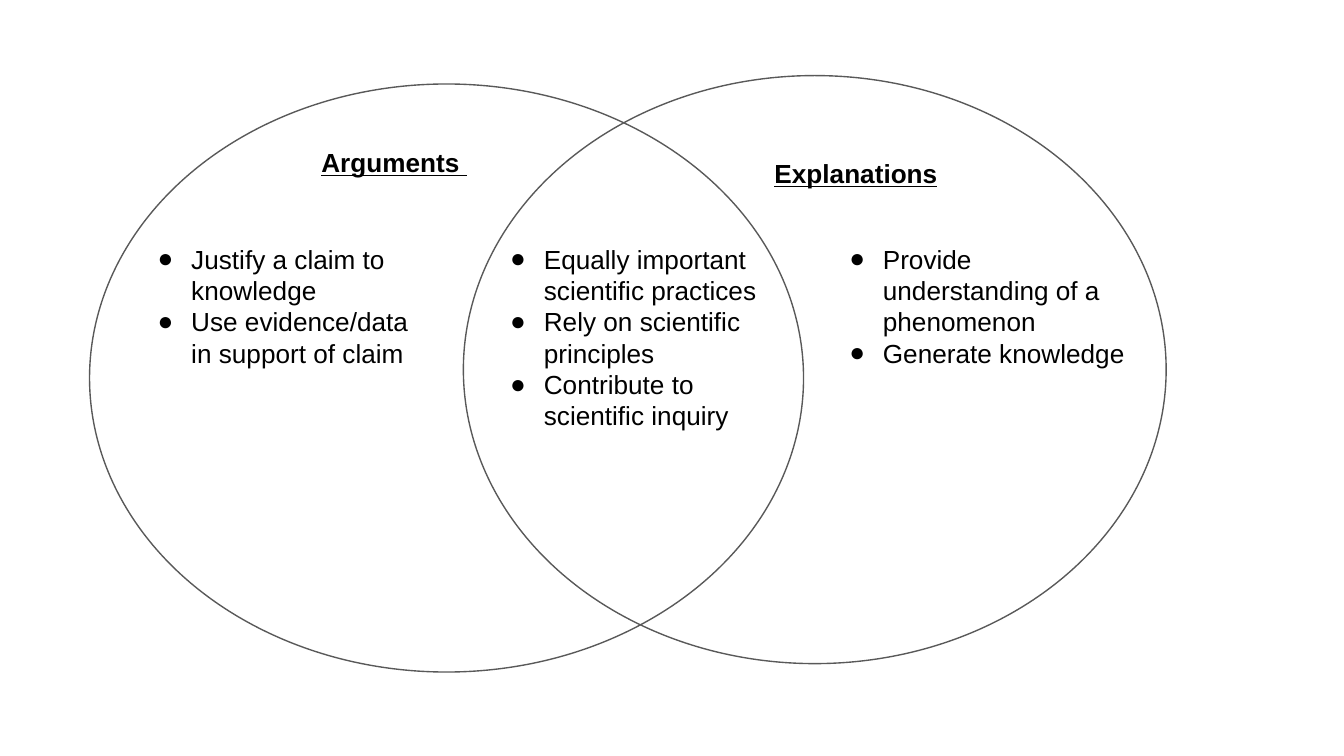
"""Build a Venn diagram slide comparing arguments and explanations."""
from lxml.etree import SubElement
from pptx import Presentation
from pptx.dml.color import RGBColor
from pptx.enum.shapes import MSO_SHAPE
from pptx.enum.text import MSO_ANCHOR, MSO_AUTO_SIZE, PP_ALIGN
from pptx.oxml.ns import qn
from pptx.util import Emu, Pt

COLORS = {"text": "000000", "outline": "595959"}
PX = 9525


class Venn:
    def __init__(self, prs):
        self.font, self.size = "Arial", Pt(14)
        self.s = prs.slides.add_slide(prs.slide_layouts[4])
        self.s.shapes.title.element.getparent().remove(self.s.shapes.title.element)

    def color(self, name):
        return RGBColor.from_string(COLORS[name])

    def circle(self, *box):
        sp = self.s.shapes.add_shape(MSO_SHAPE.OVAL, *(Emu(v * PX) for v in box))
        sp.shadow.inherit = False
        sp.fill.background()
        sp.line.color.rgb = self.color("outline")
        sp.line.width = Pt(0.75)

    def text(self, lines, box, idx=None, heading=False):
        box = [Emu(v * PX) for v in box]
        if idx is None:
            sp = self.s.shapes.add_textbox(*box)
        else:
            sp = self.s.placeholders[idx]
            sp.left, sp.top, sp.width, sp.height = box
        tf = sp.text_frame
        tf.text = "\n".join(lines)
        tf.word_wrap = True
        tf.auto_size = MSO_AUTO_SIZE.NONE
        tf.vertical_anchor = MSO_ANCHOR.TOP
        tf.margin_left = tf.margin_right = tf.margin_top = tf.margin_bottom = Pt(7.2)
        for p in tf.paragraphs:
            p.alignment = PP_ALIGN.CENTER if heading else PP_ALIGN.LEFT
            p.space_before = p.space_after = Pt(0)
            p.line_spacing = 1.0
            for r in p.runs:
                r.font.name, r.font.size = self.font, self.size
                r.font.color.rgb = self.color("text")
                r.font.bold = r.font.underline = heading
        return tf

    def heading(self, text, box, idx):
        self.text([text], box, idx, heading=True)

    def bullets(self, lines, box, idx=None):
        for p in self.text(lines, box, idx).paragraphs:
            pPr = p._p.get_or_add_pPr()
            pPr.set("marL", str(48 * PX))
            pPr.set("indent", str(-24 * PX))
            SubElement(pPr, qn("a:buFont"), typeface=self.font)
            SubElement(pPr, qn("a:buChar"), char="●")


def main():
    prs = Presentation()
    prs.slide_width, prs.slide_height = Emu(960 * PX), Emu(540 * PX)
    venn = Venn(prs)
    venn.circle(64, 60, 510, 420)
    venn.circle(331, 54, 502, 420)
    venn.heading("Arguments ", (188, 95, 187, 41), 1)
    venn.heading("Explanations", (518, 103, 187, 41), 3)
    venn.bullets(["Justify a claim to knowledge",
                  "Use evidence/data in support of claim"], (79, 164, 239, 127), 2)
    venn.bullets(["Provide understanding of a phenomenon",
                  "Generate knowledge"], (573, 164, 250, 127), 4)
    venn.bullets(["Equally important scientific practices",
                  "Rely on scientific principles",
                  "Contribute to scientific inquiry"], (331, 164, 250, 127))
    prs.save("out.pptx")


if __name__ == "__main__":
    main()
